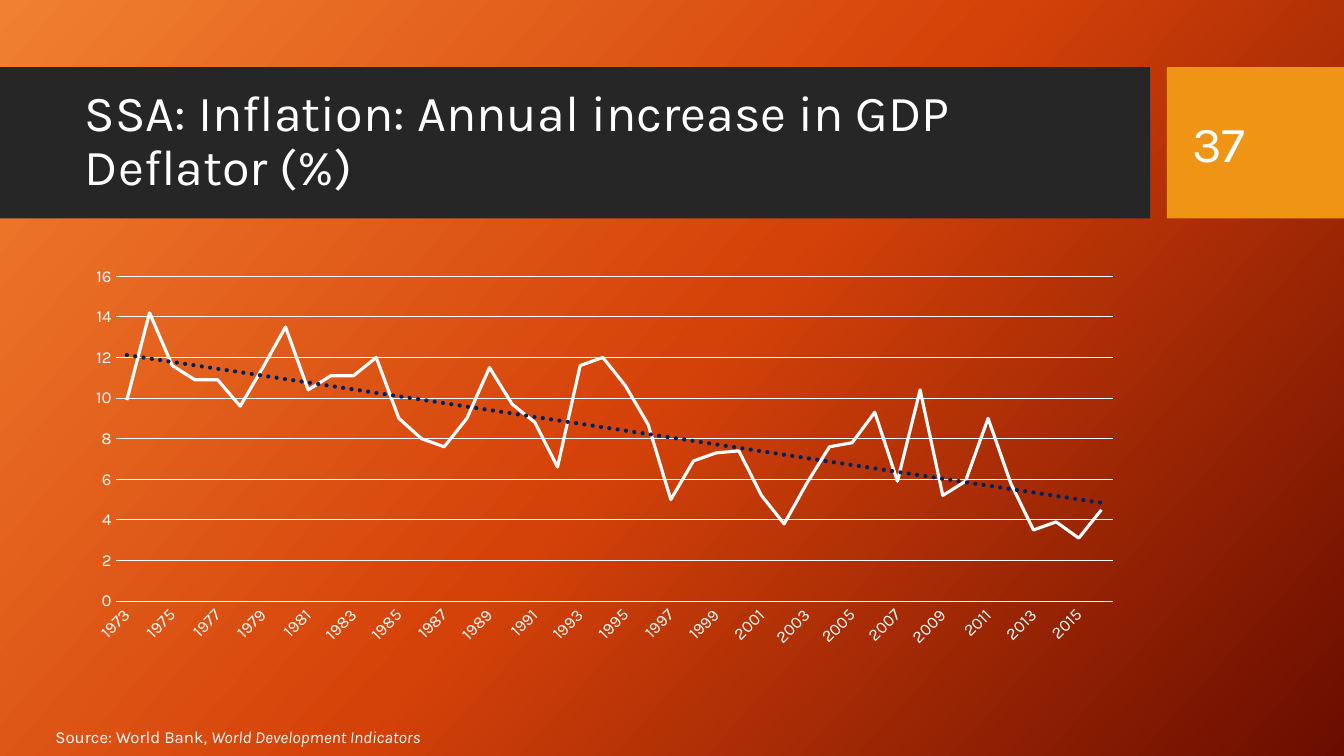
import copy

import pptx
import pptx.chart.data
import pptx.dml.color
import pptx.enum.chart
import pptx.enum.shapes
import pptx.enum.text
import pptx.oxml
import pptx.oxml.ns
import pptx.util

Pt = pptx.util.Pt
RGBColor = pptx.dml.color.RGBColor
qn = pptx.oxml.ns.qn

WHITE = RGBColor(0xFF, 0xFF, 0xFF)
CHARCOAL = RGBColor(0x26, 0x26, 0x26)
AMBER = RGBColor(0xF0, 0x94, 0x15)
NAVY = RGBColor(0x00, 0x20, 0x60)
ORANGE = RGBColor(0xF1, 0x80, 0x31)
RUST = RGBColor(0xD5, 0x42, 0x09)
MAROON = RGBColor(0x6A, 0x0D, 0x00)

FIRST_YEAR = 1973
INFLATION = [
    9.9, 14.2, 11.6, 10.9, 10.9, 9.6, 11.5, 13.5, 10.4, 11.1, 11.1,
    12, 9, 8, 7.6, 9, 11.5, 9.7, 8.8, 6.6, 11.6, 12,
    10.6, 8.7, 5, 6.9, 7.3, 7.4, 5.2, 3.8, 5.8, 7.6, 7.8,
    9.3, 5.9, 10.4, 5.2, 5.9, 9, 5.8, 3.5, 3.9, 3.1, 4.5,
]


class SlideBuilder:
    """Hold the style and the current slide, and add each kind of element."""

    font_name = "Karla"

    def __init__(self, deck):
        self.page = deck.slides.add_slide(deck.slide_layouts[5])

    def background(self, colors, angle):
        fill = self.page.background.fill
        fill.gradient()
        fill.gradient_angle = angle
        stop_list = self.page.element.find(".//" + qn("a:gsLst"))
        while len(stop_list) < len(colors):
            stop_list.append(copy.deepcopy(stop_list[0]))
        for index, (stop, color) in enumerate(zip(fill.gradient_stops, colors)):
            stop.position = index / (len(colors) - 1)
            stop.color.rgb = color

    def panel(self, left, top, width, height, color):
        shape = self.page.shapes.add_shape(
            pptx.enum.shapes.MSO_SHAPE.RECTANGLE,
            Pt(left), Pt(top), Pt(width), Pt(height))
        shape.shadow.inherit = False
        shape.fill.solid()
        shape.fill.fore_color.rgb = color
        shape.line.fill.background()

    def style(self, font, size):
        font.name = self.font_name
        font.size = Pt(size)
        font.color.rgb = WHITE

    def add_spans(self, box, spans, size, anchor):
        frame = box.text_frame
        frame.word_wrap = True
        frame.auto_size = pptx.enum.text.MSO_AUTO_SIZE.NONE
        frame.vertical_anchor = anchor
        para = frame.paragraphs[0]
        para.alignment = pptx.enum.text.PP_ALIGN.LEFT
        for text, italic in spans:
            span = para.add_run()
            span.text = text
            self.style(span.font, size)
            span.font.italic = italic
        return para

    def title(self, left, top, width, height, text, size):
        box = self.page.shapes.title
        box.left, box.top, box.width, box.height = map(Pt, (left, top, width, height))
        para = self.add_spans(box, [(text, False)], size, pptx.enum.text.MSO_ANCHOR.MIDDLE)
        para.line_spacing = 0.9
        tree = self.page.shapes.element
        tree.remove(box.element)
        tree.append(box.element)

    def text(self, left, top, width, height, spans, size, anchor):
        box = self.page.shapes.add_textbox(Pt(left), Pt(top), Pt(width), Pt(height))
        self.add_spans(box, spans, size, anchor)

    def line_chart(self, left, top, width, height, name, years, values):
        data = pptx.chart.data.CategoryChartData()
        data.categories = years
        data.add_series(name, values)
        chart = self.page.shapes.add_chart(
            pptx.enum.chart.XL_CHART_TYPE.LINE,
            Pt(left), Pt(top), Pt(width), Pt(height), data).chart
        chart.has_title = False
        chart.has_legend = False
        self.style(chart.font, 10)
        plot = chart.plots[0]
        plot.vary_by_categories = False
        series = plot.series[0]
        series.smooth = False
        series.format.line.color.rgb = WHITE
        series.format.line.width = Pt(2.25)
        self.trend(series)
        for axis in (chart.category_axis, chart.value_axis):
            self.style(axis.tick_labels.font, 12)
            axis.major_tick_mark = pptx.enum.chart.XL_TICK_MARK.NONE
            axis.minor_tick_mark = pptx.enum.chart.XL_TICK_MARK.NONE
        scale = chart.value_axis
        scale.minimum_scale, scale.maximum_scale, scale.major_unit = 0, 16, 2
        scale.format.line.fill.background()
        scale.has_major_gridlines = True
        for line in (scale.major_gridlines.format.line, chart.category_axis.format.line):
            line.color.rgb = WHITE
            line.width = Pt(0.75)

    def trend(self, series):
        trend = pptx.oxml.parse_xml(
            f'<c:trendline {pptx.oxml.ns.nsdecls("c", "a")}><c:spPr>'
            f'<a:ln w="{Pt(3)}" cap="rnd"><a:solidFill><a:srgbClr val="{NAVY}"/></a:solidFill>'
            '<a:prstDash val="sysDot"/></a:ln></c:spPr><c:trendlineType val="linear"/>'
            '<c:dispRSqr val="0"/><c:dispEq val="0"/></c:trendline>')
        series._element.find(qn("c:cat")).addprevious(trend)


def main():
    deck = pptx.Presentation()
    deck.slide_width, deck.slide_height = Pt(960), Pt(540)
    middle = pptx.enum.text.MSO_ANCHOR.MIDDLE
    slide = SlideBuilder(deck)
    slide.background([ORANGE, RUST, MAROON], 318)
    slide.panel(0, 48, 821.5, 108, CHARCOAL)
    slide.panel(833.5, 48, 126.5, 108, AMBER)
    slide.title(53.5, 59, 756.5, 85,
                "SSA: Inflation: Annual increase in GDP Deflator (%)", 36)
    slide.text(844.5, 59, 91, 85.5, [("37", False)], 36, middle)
    slide.text(32.5, 515.5, 665, 36,
               [("Source: World Bank, ", False), ("World Development Indicators", True)],
               12, pptx.enum.text.MSO_ANCHOR.TOP)
    years = [str(FIRST_YEAR + step) for step in range(len(INFLATION))]
    slide.line_chart(53.5, 184.5, 756.5, 283.5, "Series 1", years, INFLATION)
    deck.save("out.pptx")


if __name__ == "__main__":
    main()
